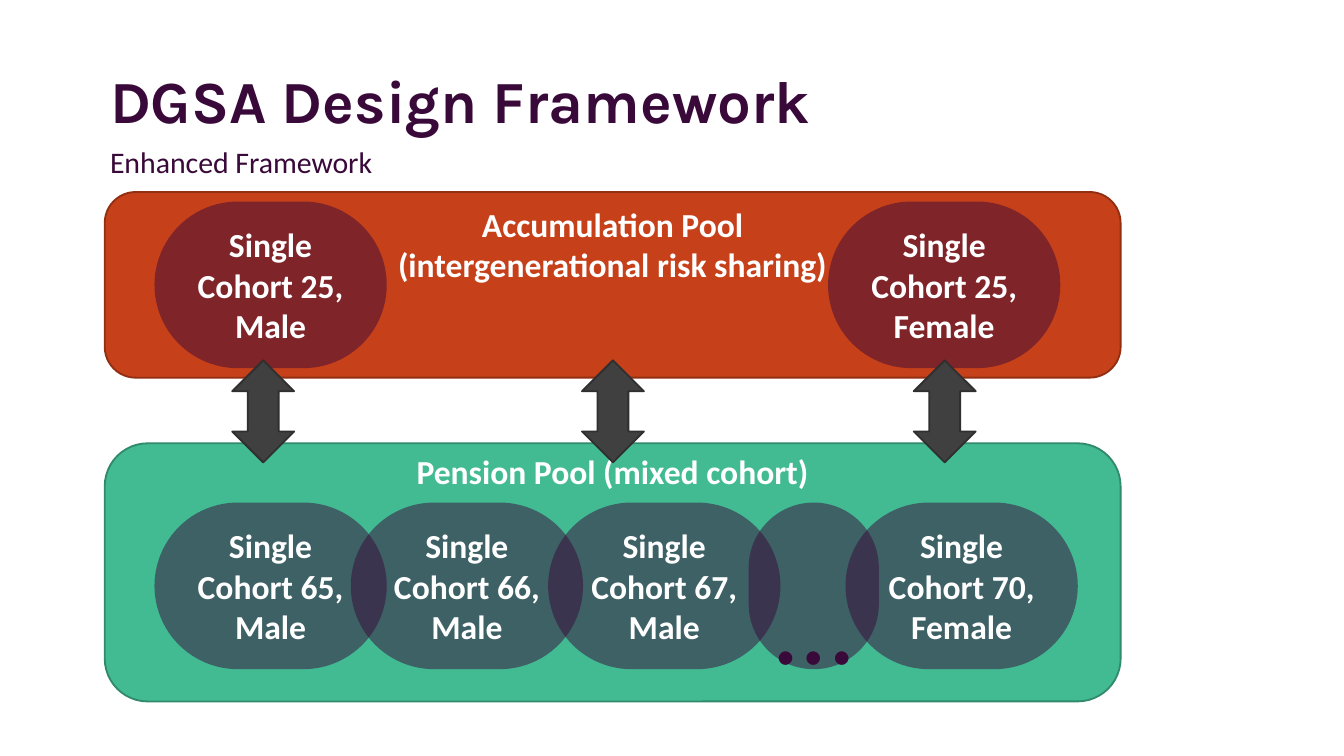
from dataclasses import dataclass

from lxml.etree import SubElement
from pptx import Presentation
from pptx.dml.color import RGBColor as Rgb
from pptx.enum.shapes import MSO_SHAPE as Preset
from pptx.enum.text import MSO_ANCHOR as Anchor, PP_ALIGN as Align
from pptx.oxml.ns import qn
from pptx.util import Cm, Pt


@dataclass(frozen=True)
class Theme:
    plum: Rgb = Rgb.from_string("390939")
    white: Rgb = Rgb.from_string("FFFFFF")
    orange: Rgb = Rgb.from_string("C6401A")
    orange_edge: Rgb = Rgb.from_string("922F13")
    green: Rgb = Rgb.from_string("42BB93")
    green_edge: Rgb = Rgb.from_string("318A6D")
    grey: Rgb = Rgb.from_string("404040")
    grey_edge: Rgb = Rgb.from_string("2F2F2F")
    heading_font: str = "Karla"
    body_font: str = "Calibri"
    title_size: Pt = Pt(32)
    subtitle_size: Pt = Pt(16)
    label_size: Pt = Pt(18)
    dots_size: Pt = Pt(60)


theme = Theme()


def add_block(preset, left, top, width, height, fill, edge=None):
    """Add a shadowless filled shape, placed in centimetres."""
    block = page.shapes.add_shape(preset, Cm(left), Cm(top), Cm(width), Cm(height))
    block.shadow.inherit = False
    block.fill.solid()
    block.fill.fore_color.rgb = fill
    if edge is None:
        block.line.fill.background()
    else:
        block.line.color.rgb = edge
        block.line.width = Pt(1)
    return block


def write(frame, lines, size, color, name=theme.body_font, bold=False, align=Align.LEFT):
    frame.word_wrap = True
    for index, line in enumerate(lines):
        para = frame.paragraphs[0] if index == 0 else frame.add_paragraph()
        para.text = line
        para.alignment = align
        para.font.name = name
        para.font.size = size
        para.font.bold = bold
        para.font.color.rgb = color


deck = Presentation()
deck.slide_width, deck.slide_height = Cm(25.4), Cm(14.29)
page = deck.slides.add_slide(deck.slide_layouts[6])

# Pools, with their headings lifted by a bottom margin
pool_left, pool_width = 1.98, 19.2
pools = [
    (8.38, 4.88, theme.green, theme.green_edge, 3.84,
     ["Pension Pool (mixed cohort)"]),
    (3.63, 3.51, theme.orange, theme.orange_edge, 1.55,
     ["Accumulation Pool", "(intergenerational risk sharing)"]),
]
for top, height, fill, edge, bottom_margin, lines in pools:
    pool = add_block(Preset.ROUNDED_RECTANGLE, pool_left, top, pool_width, height, fill, edge)
    frame = pool.text_frame
    frame.vertical_anchor = Anchor.MIDDLE
    frame.margin_top, frame.margin_bottom = 0, Cm(bottom_margin)
    write(frame, lines, theme.label_size, theme.white, bold=True, align=Align.CENTER)

# Title, subtitle and the dots for the cohorts left out
texts = [
    ("DGSA Design Framework", 1.98, 0.51, 22.12, 2.16, (0.1, 0.13, 0.25, 0.13),
     Anchor.BOTTOM, theme.title_size, theme.heading_font, True),
    ("Enhanced Framework", 1.98, 2.72, 22.12, 1.5, (0.1, 0, 0.1, 0.1),
     Anchor.TOP, theme.subtitle_size, theme.body_font, False),
    ("…", 14.55, 10.34, 2.18, 2.77, (0.1, 0.1, 0.1, 0.1),
     Anchor.TOP, theme.dots_size, theme.body_font, False),
]
for text, left, top, width, height, margins, anchor, size, name, bold in texts:
    box = page.shapes.add_textbox(Cm(left), Cm(top), Cm(width), Cm(height))
    frame = box.text_frame
    frame.vertical_anchor = anchor
    (frame.margin_left, frame.margin_top,
     frame.margin_right, frame.margin_bottom) = map(Cm, margins)
    write(frame, [text], size, theme.plum, name, bold)
    if size == theme.title_size:
        frame.paragraphs[0].line_spacing = 0.75

# Half-transparent cohorts
accumulation_top, pension_top = 3.81, 9.5
cohort_width, cohort_height = 4.39, 3.15
cohorts = [
    ("Single Cohort 65, Male", 2.92, pension_top, cohort_width),
    ("Single Cohort 66, Male", 6.63, pension_top, cohort_width),
    ("Single Cohort 67, Male", 10.36, pension_top, cohort_width),
    ("Single Cohort 70, Female", 15.98, pension_top, cohort_width),
    ("", 14.15, pension_top, 2.46),
    ("Single Cohort 25, Male", 2.92, accumulation_top, cohort_width),
    ("Single Cohort 25, Female", 15.65, accumulation_top, cohort_width),
]
for label, left, top, width in cohorts:
    cohort = add_block(Preset.ROUNDED_RECTANGLE, left, top, width, cohort_height, theme.plum)
    cohort.adjustments[0] = 0.5
    color = cohort.fill._xPr.find(qn("a:solidFill"))[0]
    SubElement(color, qn("a:alpha"), val="50000")
    if label:
        cohort.text_frame.vertical_anchor = Anchor.MIDDLE
        write(cohort.text_frame, [label], theme.label_size, theme.white,
              bold=True, align=Align.CENTER)

# Exchange between the pools
for left in (4.01, 10.62, 16.89):
    arrow = add_block(Preset.LEFT_RIGHT_ARROW, left, 7.19, 1.93, 1.17,
                      theme.grey, theme.grey_edge)
    arrow.rotation = 270

deck.save("out.pptx")
